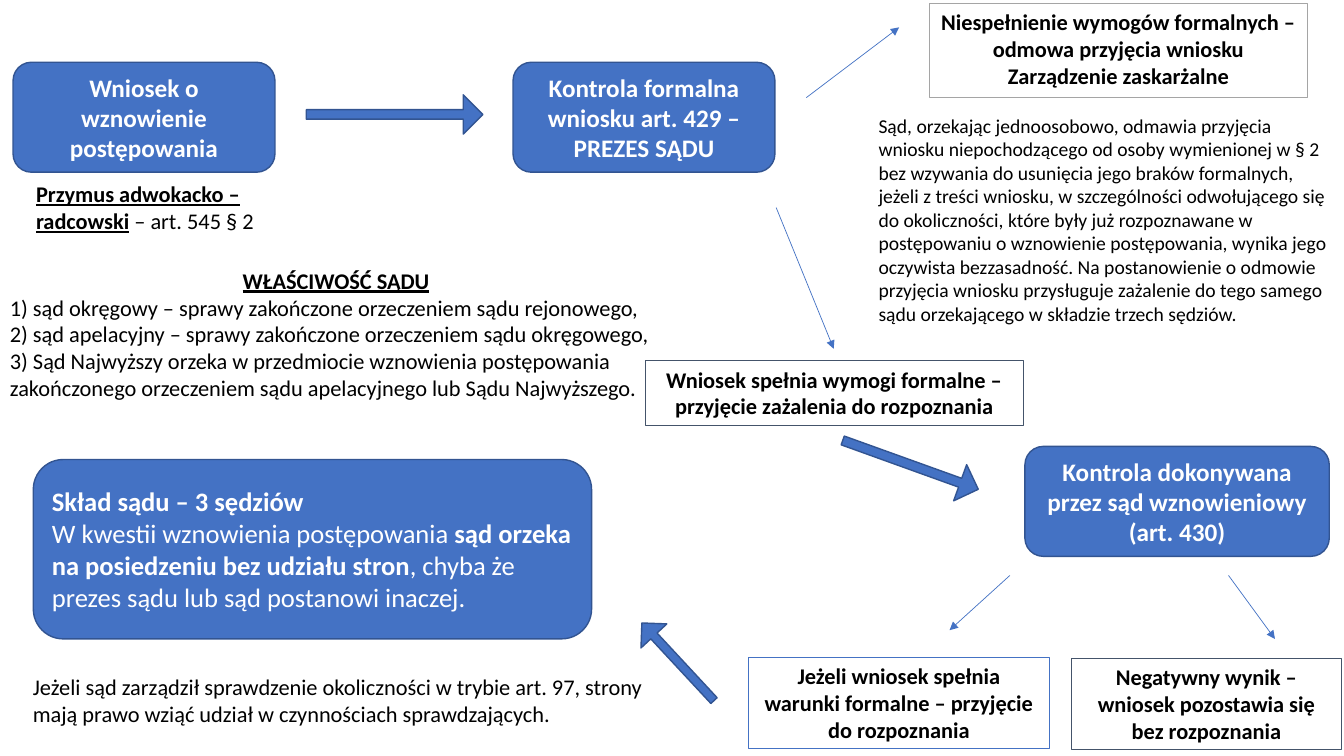
from dataclasses import dataclass

from lxml import etree
from pptx import Presentation
from pptx.dml.color import RGBColor
from pptx.enum.shapes import MSO_CONNECTOR, MSO_SHAPE
from pptx.enum.text import MSO_ANCHOR, MSO_AUTO_SIZE, PP_ALIGN
from pptx.oxml.ns import qn
from pptx.util import Cm, Pt

ROUNDED, RECTANGLE = MSO_SHAPE.ROUNDED_RECTANGLE, MSO_SHAPE.RECTANGLE
RIGHT_ARROW, STRAIGHT = MSO_SHAPE.RIGHT_ARROW, MSO_CONNECTOR.STRAIGHT
TOP, MIDDLE = MSO_ANCHOR.TOP, MSO_ANCHOR.MIDDLE
LEFT, CENTER = PP_ALIGN.LEFT, PP_ALIGN.CENTER
GROW = MSO_AUTO_SIZE.SHAPE_TO_FIT_TEXT


@dataclass(frozen=True)
class Theme:
    font: str = "Calibri"
    blue: RGBColor = RGBColor(0x44, 0x72, 0xC4)
    outline: RGBColor = RGBColor(0x32, 0x54, 0x91)
    gray: RGBColor = RGBColor(0xA5, 0xA5, 0xA5)
    slate: RGBColor = RGBColor(0x44, 0x54, 0x6A)
    white: RGBColor = RGBColor(0xFF, 0xFF, 0xFF)
    black: RGBColor = RGBColor(0, 0, 0)
    panel_size: int = 19
    step_size: int = 18
    body_size: int = 16
    small_size: int = 14


theme = Theme()


def write(shape, paragraphs, size, color, anchor=TOP):
    """Fill a shape with (alignment, runs) paragraphs; a run is (text, "b"/"u" flags)."""
    frame = shape.text_frame
    frame.word_wrap = True
    frame.vertical_anchor = anchor
    if anchor == TOP:
        frame.auto_size = GROW
    for index, (alignment, runs) in enumerate(paragraphs):
        paragraph = frame.add_paragraph() if index else frame.paragraphs[0]
        paragraph.alignment = alignment
        for text, flags in runs:
            run = paragraph.add_run()
            run.text = text
            run.font.name = theme.font
            run.font.size = Pt(size)
            run.font.color.rgb = color
            run.font.bold = "b" in flags
            run.font.underline = "u" in flags


def add_outlined(preset, place, line_color, line_width, fill=None):
    shape = slide.shapes.add_shape(preset, *map(Cm, place))
    shape.shadow.inherit = False
    if fill is None:
        shape.fill.background()
    else:
        shape.fill.solid()
        shape.fill.fore_color.rgb = fill
    shape.line.color.rgb = line_color
    shape.line.width = Pt(line_width)
    return shape


presentation = Presentation()
presentation.slide_width = Cm(33.87)
presentation.slide_height = Cm(19.05)
slide = presentation.slides.add_slide(presentation.slide_layouts[6])

# Procedure steps
steps = [
    ((0.33, 1.57, 6.6, 2.77), "Wniosek o wznowienie postępowania"),
    ((12.93, 1.57, 6.6, 2.77), "Kontrola formalna wniosku art. 429 – PREZES SĄDU"),
    ((25.83, 11.25, 7.67, 2.77), "Kontrola dokonywana przez sąd wznowieniowy (art. 430)"),
]
for place, text in steps:
    step = add_outlined(ROUNDED, place, theme.outline, 1, theme.blue)
    write(step, [(CENTER, [(text, "b")])], theme.step_size, theme.white, MIDDLE)

court_panel = add_outlined(ROUNDED, (0.84, 11.58, 14.07, 4.52), theme.outline, 1, theme.blue)
write(court_panel, [
    (LEFT, [("Skład sądu – 3 sędziów", "b")]),
    (LEFT, [("W kwestii wznowienia postępowania ", ""),
            ("sąd orzeka na posiedzeniu bez udziału stron", "b"),
            (", chyba że prezes sądu lub sąd postanowi inaczej.", "")]),
], theme.panel_size, theme.white, MIDDLE)

# Block arrows between the steps
block_arrows = [
    ((7.72, 2.39, 4.45, 0.99), 0),
    ((21.13, 11.23, 3.63, 0.97), 19.8),
    ((15.75, 16.23, 2.67, 0.89), 227.1),
]
for place, rotation in block_arrows:
    block_arrow = add_outlined(RIGHT_ARROW, place, theme.outline, 1, theme.blue)
    block_arrow.adjustments[0] = 0.242
    block_arrow.rotation = rotation

# Thin arrows to the outcomes
outcome_arrows = [
    (20.32, 2.46, 22.66, 0.69),
    (19.56, 5.23, 21.01, 8.79),
    (30.96, 14.5, 32.13, 16.1),
    (25.45, 14.5, 23.93, 15.88),
]
for ends in outcome_arrows:
    outcome_arrow = slide.shapes.add_connector(STRAIGHT, *map(Cm, ends))
    outcome_arrow.line.color.rgb = theme.blue
    outcome_arrow.line.width = Pt(0.5)
    etree.SubElement(outcome_arrow.line._get_or_add_ln(), qn("a:tailEnd"), type="triangle")
    etree.SubElement(outcome_arrow._element.spPr, qn("a:effectLst"))

# Outcomes
outcomes = [
    ((23.42, 0.08, 9.53, 2.39), theme.gray,
     ["Niespełnienie wymogów formalnych – odmowa przyjęcia wniosku",
      "Zarządzenie zaskarżalne"]),
    ((16.26, 9.09, 9.53, 1.63), theme.slate,
     ["Wniosek spełnia wymogi formalne – przyjęcie zażalenia do rozpoznania"]),
    ((27, 16.59, 6.81, 2.31), theme.slate,
     ["Negatywny wynik – wniosek pozostawia się bez rozpoznania"]),
    ((18.87, 16.56, 7.57, 2.31), theme.blue,
     ["Jeżeli wniosek spełnia warunki formalne – przyjęcie do rozpoznania"]),
]
for place, border, lines in outcomes:
    outcome = add_outlined(RECTANGLE, place, border, 0.75)
    write(outcome, [(CENTER, [(line, "b")]) for line in lines], theme.body_size, theme.black)

# Notes on the law
legal_notes = [
    ((0.66, 4.42, 6.93, 1.63), theme.body_size, [
        (LEFT, [("Przymus adwokacko – radcowski", "bu"), (" – art. 545 § 2", "")]),
    ]),
    ((0, 6.6, 16.94, 3.68), theme.body_size, [
        (CENTER, [("WŁAŚCIWOŚĆ SĄDU", "bu")]),
        (LEFT, [("1) sąd okręgowy – sprawy zakończone orzeczeniem sądu rejonowego,", "")]),
        (LEFT, [("2) sąd apelacyjny – sprawy zakończone orzeczeniem sądu okręgowego,", "")]),
        (LEFT, [("3) Sąd Najwyższy orzeka w przedmiocie wznowienia postępowania "
                 "zakończonego orzeczeniem sądu apelacyjnego lub Sądu Najwyższego.", "")]),
    ]),
    ((0.58, 16.84, 16.94, 1.63), theme.body_size, [
        (LEFT, [("Jeżeli sąd zarządził sprawdzenie okoliczności w trybie art. 97, strony "
                 "mają prawo wziąć udział w czynnościach sprawdzających.", "")]),
    ]),
    ((21.89, 2.74, 11.96, 5.64), theme.small_size, [
        (LEFT, [("Sąd, orzekając jednoosobowo, odmawia przyjęcia wniosku niepochodzącego "
                 "od osoby wymienionej w § 2 bez wzywania do usunięcia jego braków "
                 "formalnych, jeżeli z treści wniosku, w szczególności odwołującego się "
                 "do okoliczności, które były już rozpoznawane w postępowaniu o wznowienie "
                 "postępowania, wynika jego oczywista bezzasadność. Na postanowienie "
                 "o odmowie przyjęcia wniosku przysługuje zażalenie do tego samego sądu "
                 "orzekającego w składzie trzech sędziów.", "")]),
    ]),
]
for place, size, paragraphs in legal_notes:
    write(slide.shapes.add_textbox(*map(Cm, place)), paragraphs, size, theme.black)

presentation.save("out.pptx")
